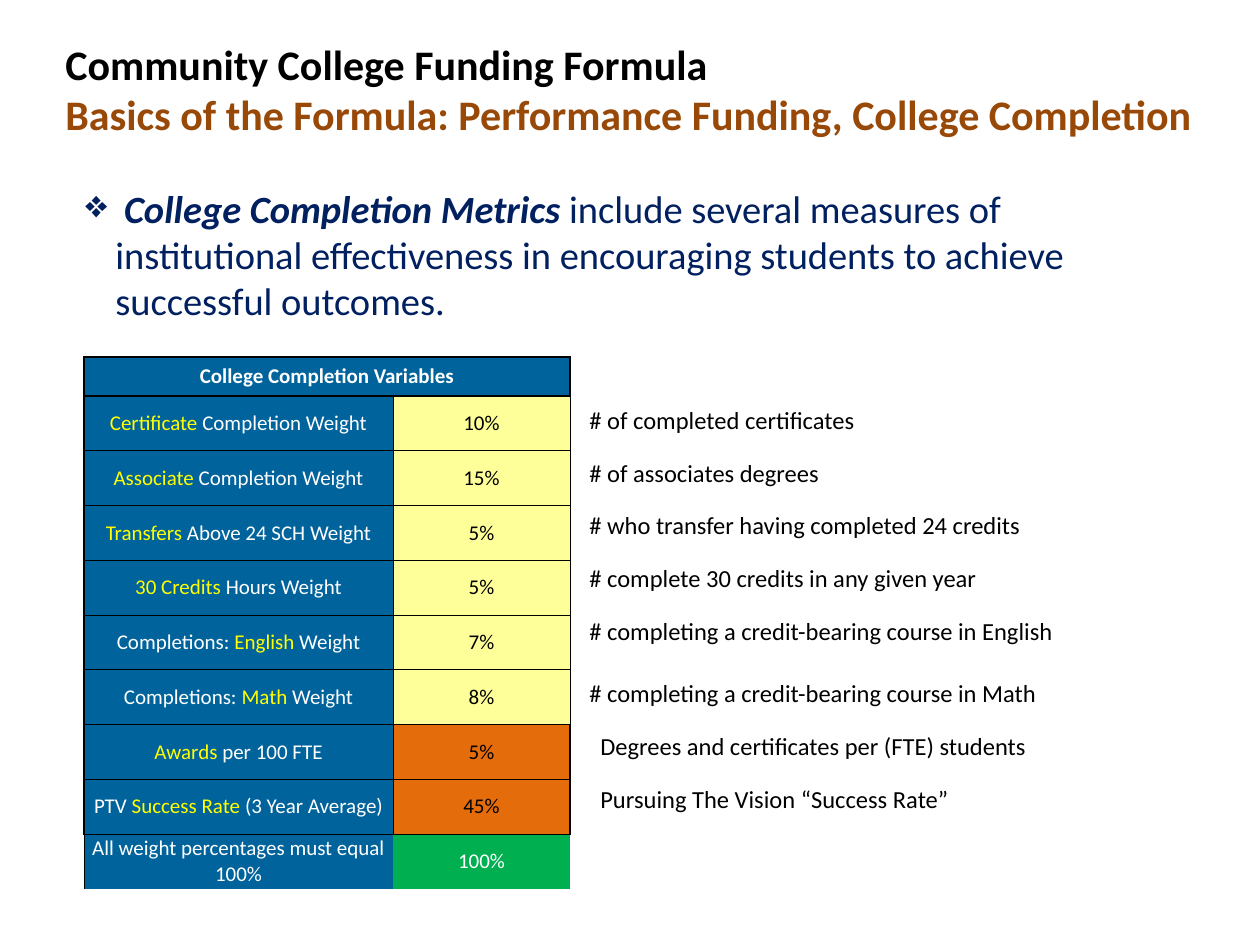
from dataclasses import dataclass

from pptx import Presentation
from pptx import util as u
from pptx.dml.color import RGBColor
from pptx.enum import text
from pptx.oxml import parse_xml
from pptx.oxml.ns import nsdecls, qn


@dataclass(frozen=True)
class Theme:
    """Colours, font and type sizes of the slide."""
    font: str = "Calibri"
    black: str = "000000"
    white: str = "FFFFFF"
    brown: str = "984807"
    navy: str = "002060"
    blue: str = "00639C"
    yellow: str = "FFFF00"
    pale: str = "FFFF99"
    orange: str = "E46C0A"
    green: str = "00B050"
    title: int = 24
    body: int = 22
    note: int = 14
    cell: int = 12


T = Theme()
NO_STYLE = "{2D5ABB26-0587-4C30-8999-92F81FD0307C}"
METRICS = [
    ("|Certificate |Completion Weight", "10%", T.pale),
    ("|Associate| Completion Weight", "15%", T.pale),
    ("|Transfers| Above 24 SCH Weight", "5%", T.pale),
    ("|30 Credits |Hours Weight", "5%", T.pale),
    ("Completions: |English| Weight", "7%", T.pale),
    ("Completions: |Math| Weight", "8%", T.pale),
    ("|Awards| per 100 FTE", "5%", T.orange),
    ("PTV |Success Rate |(3 Year Average)", "45%", T.orange),
]
COUNTS = [
    "# of completed certificates",
    "# of associates degrees",
    "# who transfer having completed 24 credits",
    "# complete 30 credits in any given year",
    "# completing a credit-bearing course in English",
]
MATH = ["# completing a credit-bearing course in Math"]
RATES = ["Degrees and certificates per (FTE) students",
         "Pursuing The Vision “Success Rate”"]


def px(n):
    """Turn pixels into EMU."""
    return u.Emu(round(n * 914400 / 126))


def add_run(p, words, size, color, bold=False, italic=False):
    """Add one styled run to a paragraph."""
    r = p.add_run()
    r.text = words
    f = r.font
    f.name, f.size, f.bold, f.italic = T.font, u.Pt(size), bold, italic
    f.color.rgb = RGBColor.from_string(color)


def add_box(s, x, y, w, h):
    """Add a wrapping text box and return its text frame."""
    tf = s.shapes.add_textbox(px(x), px(y), px(w), px(h)).text_frame
    tf.word_wrap = True
    tf.auto_size = text.MSO_AUTO_SIZE.SHAPE_TO_FIT_TEXT
    return tf


def add_title(s, x, y, w, h):
    """Place the two-line heading."""
    tf = add_box(s, x, y, w, h)
    add_run(tf.paragraphs[0], "Community College Funding Formula", T.title, T.black, True)
    add_run(tf.add_paragraph(),
            "Basics of the Formula: Performance Funding, College Completion",
            T.title, T.brown, True)


def add_statement(s, x, y, w, h):
    """Place the bulleted statement."""
    p = add_box(s, x, y, w, h).paragraphs[0]
    pPr = p._p.get_or_add_pPr()
    pPr.set("marL", str(px(30)))
    pPr.set("indent", str(-px(30)))
    pPr.append(parse_xml(f'<a:buChar {nsdecls("a")} char="❖"/>'))
    add_run(p, " College Completion Metrics", T.body, T.navy, True, True)
    add_run(p, " include several measures of institutional effectiveness in "
               "encouraging students to achieve successful outcomes.", T.body, T.navy)


def set_borders(cell, **widths):
    """Draw black cell borders, keyed by side, with widths in points."""
    tcPr = cell._tc.get_or_add_tcPr()
    sides = [side for side in "LRTB" if side in widths]
    for i, side in enumerate(sides):
        tcPr.insert(i, parse_xml(
            f'<a:ln{side} {nsdecls("a")} w="{u.Pt(widths[side])}"><a:solidFill>'
            f'<a:srgbClr val="{T.black}"/></a:solidFill></a:ln{side}>'))


def fill_cell(cell, words, fill, color, bold=False, **widths):
    """Fill a cell; words between bars take the accent colour."""
    cell.fill.solid()
    cell.fill.fore_color.rgb = RGBColor.from_string(fill)
    cell.margin_left = cell.margin_right = cell.margin_top = cell.margin_bottom = 0
    cell.vertical_anchor = text.MSO_ANCHOR.MIDDLE
    p = cell.text_frame.paragraphs[0]
    p.alignment = text.PP_ALIGN.CENTER
    for i, part in enumerate(words.split("|")):
        if part:
            add_run(p, part, T.cell, T.yellow if i % 2 else color, bold)
    set_borders(cell, **widths)


def add_weights(s, x, y, w, h):
    """Place the table of completion weights."""
    n, head, label = len(METRICS) + 2, 39, 309
    tbl = s.shapes.add_table(n, 2, px(x), px(y), px(w), px(h)).table
    tbl.first_row = tbl.horz_banding = False
    tbl._tbl.tblPr.find(qn("a:tableStyleId")).text = NO_STYLE
    for col, width in zip(tbl.columns, (label, w - label)):
        col.width = px(width)
    for i, row in enumerate(tbl.rows):
        row.height = px((h - head) / (n - 1) if i else head)
    tbl.cell(0, 0).merge(tbl.cell(0, 1))
    fill_cell(tbl.cell(0, 0), "College Completion Variables", T.blue, T.white, True,
              L=1, R=1, T=1, B=1)
    set_borders(tbl.cell(0, 1), R=1, T=1, B=1)
    for i, (name, weight, fill) in enumerate(METRICS, 1):
        top = 1 if i == 1 else 0.5
        fill_cell(tbl.cell(i, 0), name, T.blue, T.white, L=1, R=0.5, T=top, B=0.5)
        fill_cell(tbl.cell(i, 1), weight, fill, T.black, L=0.5,
                  R=1 if fill == T.orange else 0.5, T=top, B=0.5)
    fill_cell(tbl.cell(n - 1, 0), "All weight percentages must equal 100%",
              T.blue, T.white, L=0.5, T=0.5)
    fill_cell(tbl.cell(n - 1, 1), "100%", T.green, T.white, T=0.5)


def add_notes(s, x, y, w, h, notes):
    """Stack one-line notes at an equal pitch over the given box."""
    pitch = h / len(notes)
    for i, note in enumerate(notes):
        p = add_box(s, x, y + i * pitch, w, 43).paragraphs[0]
        add_run(p, note, T.note, T.black)


def main():
    """Build and save the slide."""
    prs = Presentation()
    prs.slide_width, prs.slide_height = px(1260), px(945)
    s = prs.slides.add_slide(prs.slide_layouts[6])
    add_title(s, 53, 32, 1166, 114)
    add_statement(s, 73, 179, 1112, 153)
    add_weights(s, 84, 357, 486, 532)
    add_notes(s, 577, 399, 640, 263, COUNTS)
    add_notes(s, 577, 672, 640, 53, MATH)
    add_notes(s, 588, 725, 557, 105, RATES)
    prs.save("out.pptx")


if __name__ == "__main__":
    main()
